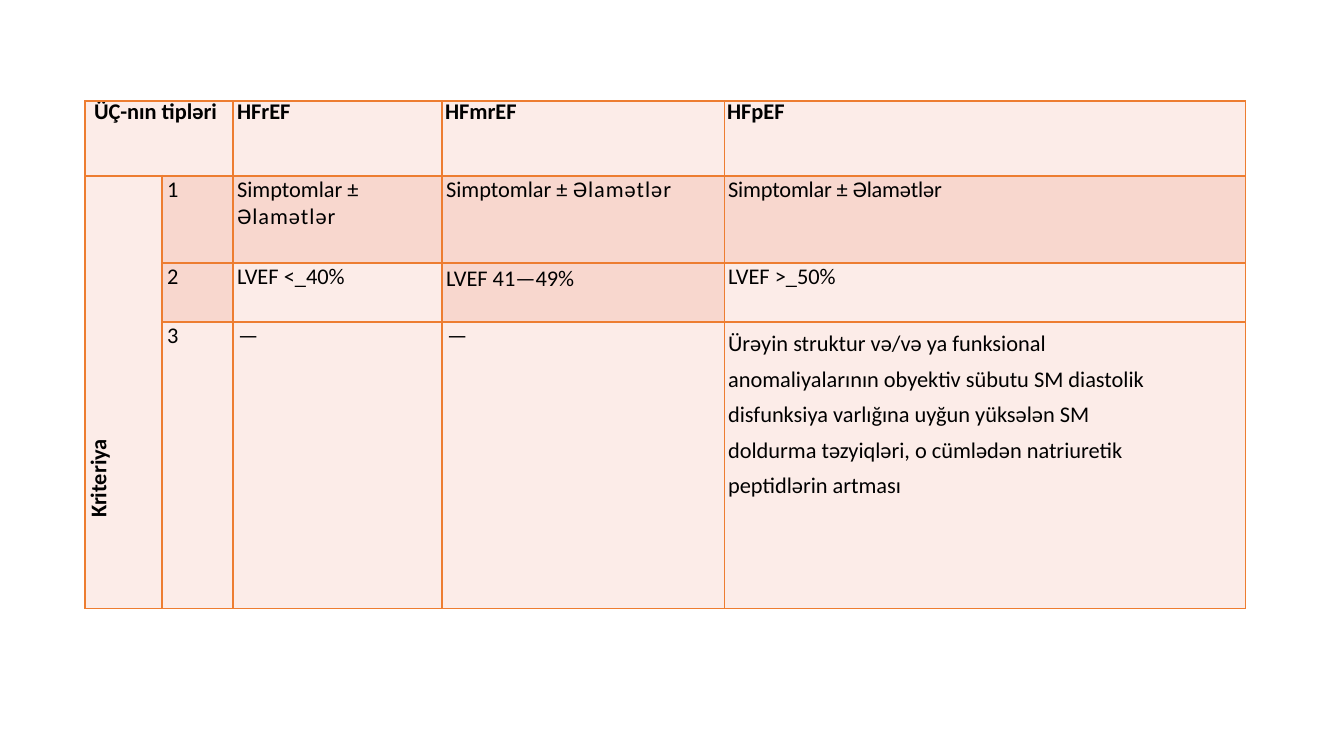
"""Build a slide with a table of heart failure types and their criteria."""
import pptx
import pptx.util
import pptx.dml.color
import pptx.oxml.ns
import lxml.etree

PX = 914400 / 100.8
ORANGE, LIGHT, DARK = "ED7D31", "FCECE8", "F8D7CE"


def color(value):
    return pptx.dml.color.RGBColor.from_string(value)


def write(cell, *runs, bold=False, indent=4, right=0, top=0, spacing=None):
    cell.margin_left = cell.margin_right = cell.margin_bottom = 0
    cell.margin_top = round(top * PX)
    p = cell.text_frame.paragraphs[0]
    pPr = p._p.get_or_add_pPr()
    pPr.set("marL", str(round(indent * PX)))
    pPr.set("marR", str(round(right * PX)))
    if spacing:
        p.line_spacing = spacing
    for text, tracking in runs:
        r = p.add_run()
        r.text = text
        r.font.name = "Calibri"
        r.font.size = pptx.util.Pt(16)
        r.font.bold = bold
        r.font.color.rgb = color("000000")
        if tracking:
            r._r.get_or_add_rPr().set("spc", str(tracking))


prs = pptx.Presentation()
prs.slide_width = pptx.util.Inches(13.33)
prs.slide_height = pptx.util.Inches(7.5)
s = prs.slides.add_slide(prs.slide_layouts[6])

widths = [77, 71, 209, 282, 521]
heights = [75, 87, 59, 287]
box = [round(v * PX) for v in (85, 101, sum(widths), sum(heights))]
table = s.shapes.add_table(len(heights), len(widths), *box).table
table.first_row = table.horz_banding = False
for column, width in zip(table.columns, widths):
    column.width = round(width * PX)
for row, height in zip(table.rows, heights):
    row.height = round(height * PX)

fills = [
    [LIGHT] * 5,
    [LIGHT] + [DARK] * 4,
    [LIGHT, DARK, LIGHT, DARK, LIGHT],
    [LIGHT] * 5,
]
thick_edges = {(1, 0), (1, 1)} | {(3, col) for col in range(1, 5)}
for row, row_fills in enumerate(fills):
    for col, fill in enumerate(row_fills):
        cell = table.cell(row, col)
        tcPr = cell._tc.get_or_add_tcPr()
        for side in "LRTB":
            edge = (row + (side == "B"), col)
            points = 2 if side in "TB" and edge in thick_edges else 1
            ln = lxml.etree.SubElement(tcPr, pptx.oxml.ns.qn("a:ln" + side), w=str(points * 12700))
            solid = lxml.etree.SubElement(ln, pptx.oxml.ns.qn("a:solidFill"))
            lxml.etree.SubElement(solid, pptx.oxml.ns.qn("a:srgbClr"), val=ORANGE)
        cell.fill.solid()
        cell.fill.fore_color.rgb = color(fill)

table.cell(0, 0).merge(table.cell(0, 1))
table.cell(1, 0).merge(table.cell(3, 0))

headers = [(0, "ÜÇ-nın tipləri", 9), (2, "HFrEF", 4), (3, "HFmrEF", 3), (4, "HFpEF", 3)]
for col, text, indent in headers:
    write(table.cell(0, col), (text, 0), bold=True, indent=indent, spacing=pptx.util.Pt(17.4))

write(table.cell(1, 0), ("Kriteriya", 0), bold=True, indent=91)
table.cell(1, 0)._tc.get_or_add_tcPr().set("vert", "vert270")

for row in (1, 2, 3):
    write(table.cell(row, 1), (str(row), 0), indent=5)
for col in (2, 3):
    write(table.cell(1, col), ("Simptomlar ± ", 0), ("Əlamətlər", 70))
    write(table.cell(3, col), ("—", 0), indent=5)
write(table.cell(1, 4), ("Simptomlar ± Əlamətlər", -10))

for col, sign, value in [(2, "<", "_40%"), (4, ">", "_50%")]:
    write(table.cell(2, col), ("LVEF ", 0), (sign, -390), (value, 0))
write(table.cell(2, 3), ("LVEF 41—49%", 0), top=2)

evidence = (
    "Ürəyin struktur və/və ya funksional anomaliyalarının obyektiv sübutu "
    "SM diastolik disfunksiya varlığına uyğun yüksələn SM doldurma təzyiqləri, "
    "o cümlədən natriuretik peptidlərin artması"
)
write(table.cell(3, 4), (evidence, 0), right=85, spacing=1.3)

prs.save("out.pptx")
